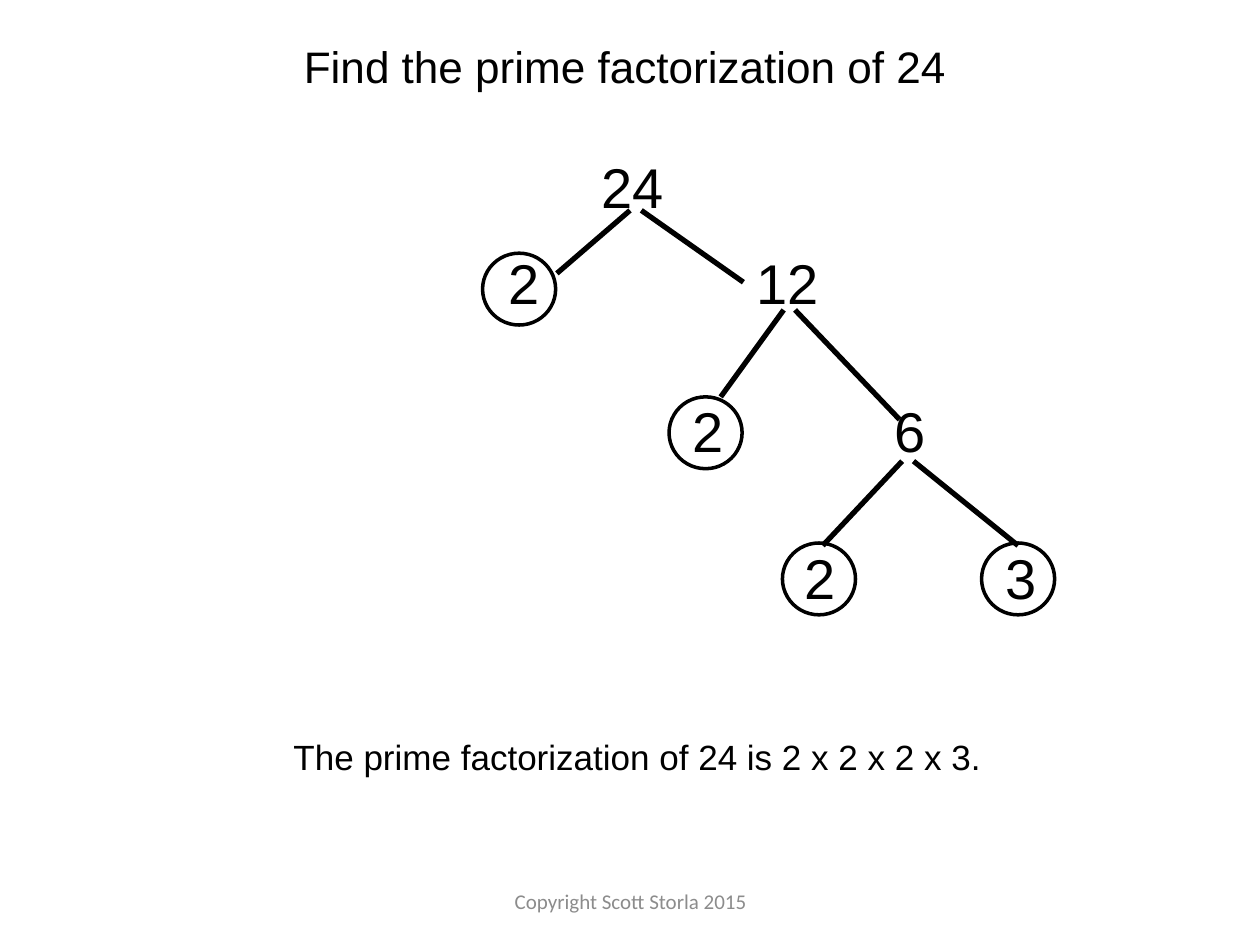
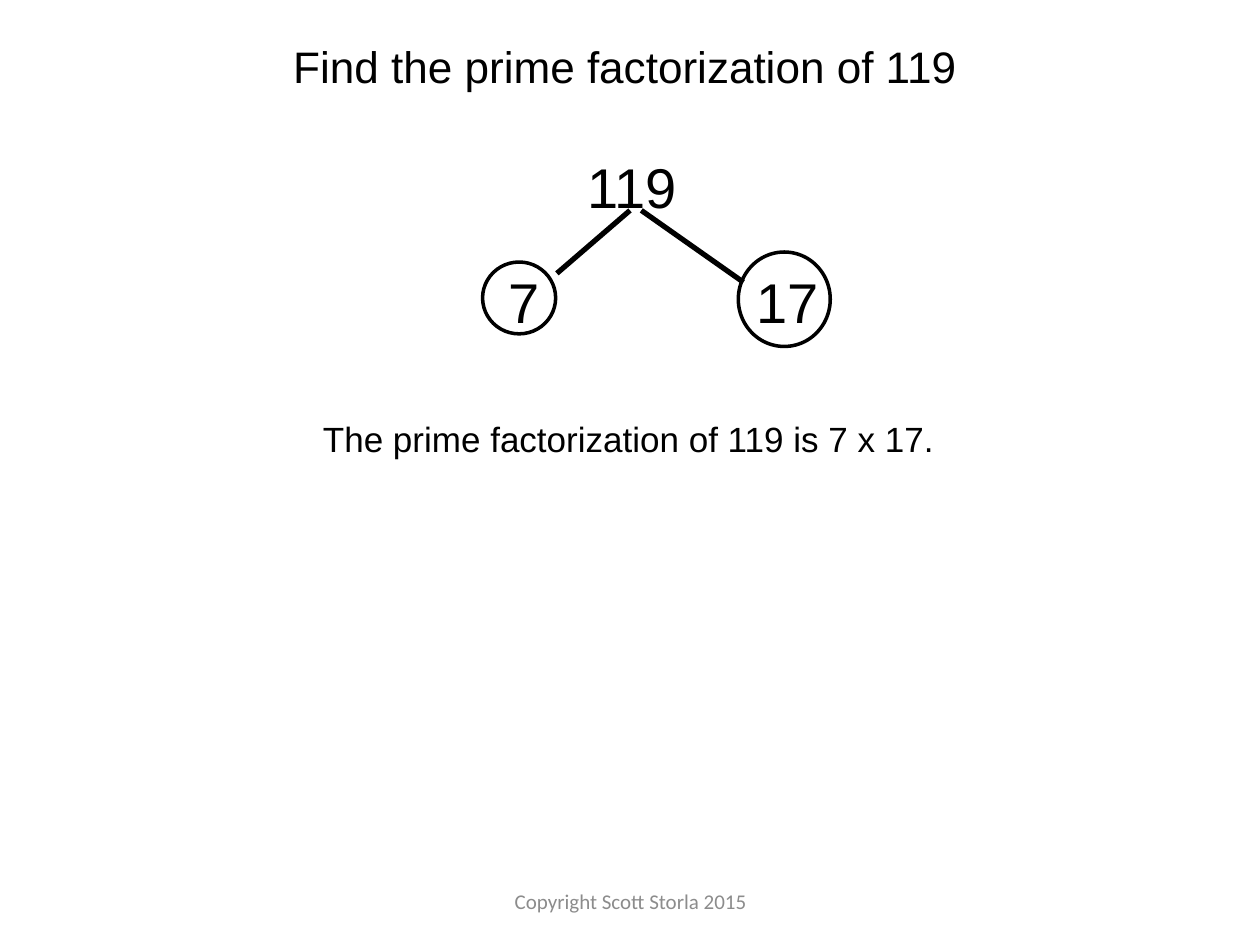
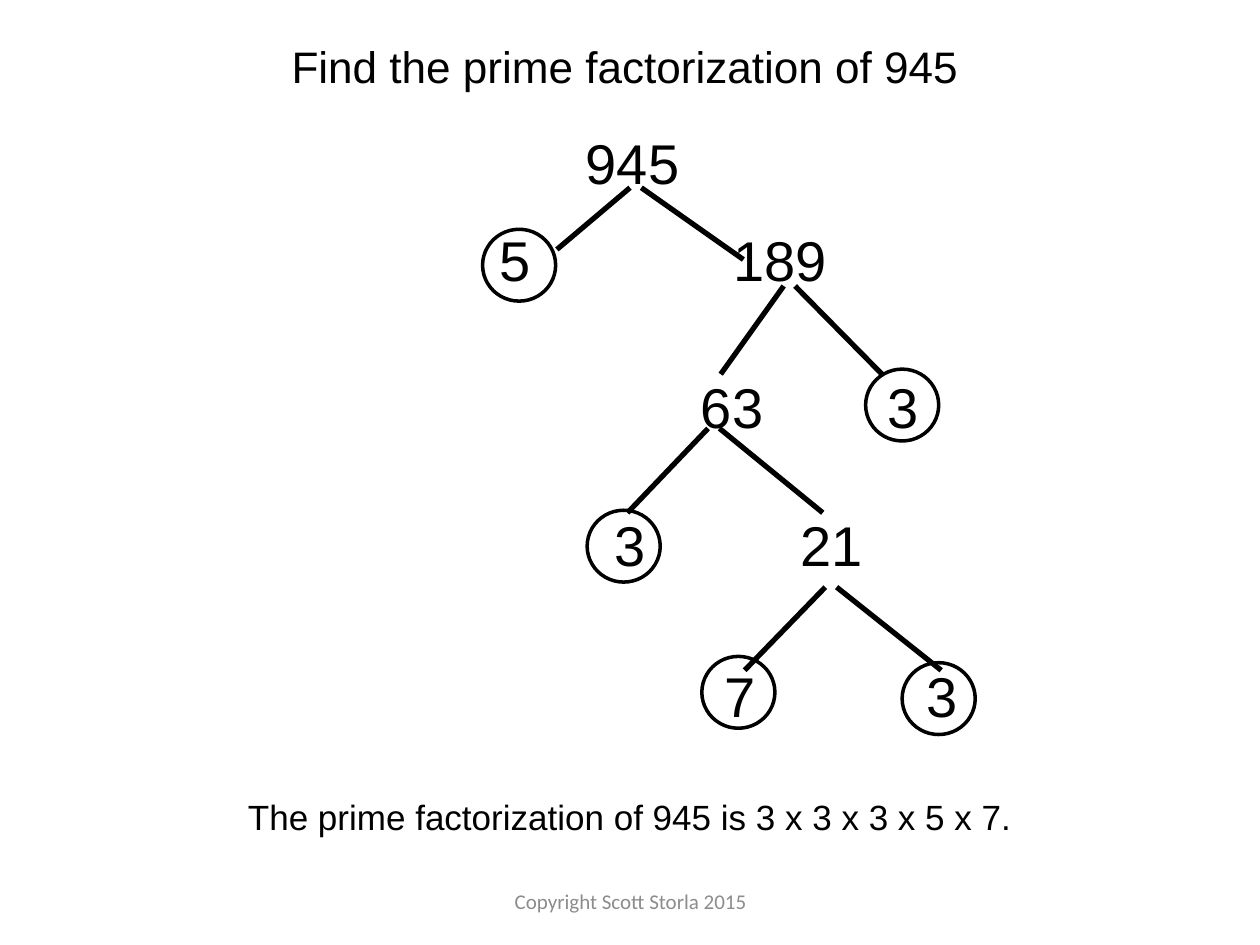
from pptx import Presentation
from pptx.dml.color import RGBColor
from pptx.enum.shapes import MSO_CONNECTOR as Connector, MSO_SHAPE as Preset
from pptx.enum.text import MSO_ANCHOR as Anchor, PP_ALIGN as Align
from pptx.util import Inches, Pt
from lxml import etree

BLACK = RGBColor(0x00, 0x00, 0x00)
GREY = RGBColor(0x8C, 0x8C, 0x8C)
WHITE = RGBColor(0xFF, 0xFF, 0xFF)
DRAWING = "http://schemas.openxmlformats.org/drawingml/2006/main"
FORK_GAP = 0.09
PRIME_SIZE = (0.58, 0.57)

TREES = [
    {
        "number": "24",
        "answer": "2 x 2 x 2 x 3.",
        "answer_at": (0.06, 5.69, 10, 0.62),
        "labels": [("24", 5.02, 1.48), ("2", 4.16, 2.24), ("12", 6.25, 2.24),
                   ("2", 5.62, 3.41), ("6", 7.22, 3.41),
                   ("2", 6.51, 4.58), ("3", 8.1, 4.58)],
        "primes": [(3.83, 2.01), (5.31, 3.15), (6.21, 4.31), (7.79, 4.31)],
        "forks": [((5, 1.67), (4.42, 2.17), (5.9, 2.24)),
                  ((6.22, 2.46), (5.72, 3.15), (7.14, 3.33)),
                  ((7.16, 3.66), (6.53, 4.33), (8.08, 4.33))],
    },
    {
        "number": "119",
        "answer": "7 x 17.",
        "answer_at": (0.06, 3.17, 9.86, 0.62),
        "labels": [("119", 5.02, 1.48), ("7", 4.16, 2.39), ("17", 6.25, 2.39)],
        "primes": [(3.83, 2.08), (5.86, 2, 0.73, 0.75)],
        "forks": [((5, 1.67), (4.42, 2.17), (5.9, 2.24))],
    },
    {
        "number": "945",
        "answer": "3 x 3 x 3 x 5 x 7.",
        "answer_at": (1, 6.17, 8, 0.62),
        "labels": [("945", 5.02, 1.29), ("5", 4.09, 2.06), ("189", 6.19, 2.06),
                   ("63", 5.81, 3.22), ("3", 7.17, 3.22),
                   ("3", 5, 4.32), ("21", 6.6, 4.32),
                   ("7", 5.87, 5.52), ("3", 7.48, 5.52)],
        "primes": [(3.83, 1.82), (6.87, 2.93), (4.66, 4.05), (5.57, 5.21), (7.16, 5.26)],
        "forks": [((5, 1.49), (4.42, 1.98), (5.9, 2.06)),
                  ((6.22, 2.27), (5.72, 2.97), (7, 2.97)),
                  ((5.62, 3.4), (4.98, 4.07), (6.53, 4.07)),
                  ((6.55, 4.66), (5.91, 5.32), (7.47, 5.32))],
    },
]


def write(box, text, size=20, font="Arial", color=BLACK):
    """Fill a box with one centred line of text."""
    frame = box.text_frame
    frame.word_wrap = True
    frame.vertical_anchor = Anchor.MIDDLE
    para = frame.paragraphs[0]
    para.alignment = Align.CENTER
    span = para.add_run()
    span.text = text
    span.font.size = Pt(size)
    span.font.name = font
    span.font.color.rgb = color


class FactorDeck:
    """Draw factor trees, one to a slide, in a common style."""

    def __init__(self):
        """Start an empty deck."""
        self.deck = Presentation()
        self.deck.slide_width = Inches(10)
        self.deck.slide_height = Inches(7.5)
        self.page = None

    def start(self, title):
        """Add a slide with its title and footer."""
        self.page = self.deck.slides.add_slide(self.deck.slide_layouts[6])
        fill = self.page.background.fill
        fill.solid()
        fill.fore_color.rgb = WHITE
        self.text(title, (0.96, 0.25, 8, 0.55), size=25.2)
        self.text("Copyright Scott Storla 2015", (3.42, 6.95, 3.17, 0.4),
                  size=12, font="Calibri", color=GREY)

    def text(self, text, place, **style):
        """Add a text box."""
        box = self.page.shapes.add_textbox(*map(Inches, place))
        write(box, text, **style)

    def label(self, number, center, middle):
        """Add a number centred on a point."""
        width, height = 1.39, 0.62
        place = (center - width / 2, middle - height / 2, width, height)
        self.text(number, place, size=32)

    def prime(self, left, top, width=PRIME_SIZE[0], height=PRIME_SIZE[1]):
        """Add the ring around a prime."""
        ring = self.page.shapes.add_shape(
            Preset.OVAL, *map(Inches, (left, top, width, height)))
        ring.shadow.inherit = False
        ring.fill.background()
        ring.line.color.rgb = BLACK
        ring.line.width = Pt(2)

    def branch(self, start, end):
        """Add one straight branch."""
        line = self.page.shapes.add_connector(
            Connector.STRAIGHT, *map(Inches, (*start, *end)))
        line.line.color.rgb = BLACK
        line.line.width = Pt(3)
        etree.SubElement(line._element.spPr, f"{{{DRAWING}}}effectLst")

    def fork(self, start, left_end, right_end):
        """Add the two branches below a number."""
        self.branch(start, left_end)
        self.branch((start[0] + FORK_GAP, start[1]), right_end)

    def tree(self, number, answer, answer_at, labels, primes, forks):
        """Add a slide with a whole factor tree."""
        self.start(f"Find the prime factorization of {number}")
        for prime in primes:
            self.prime(*prime)
        for fork in forks:
            self.fork(*fork)
        for label in labels:
            self.label(*label)
        self.text(f"The prime factorization of {number} is {answer}", answer_at)


def main():
    """Build and save the deck."""
    factors = FactorDeck()
    for tree in TREES:
        factors.tree(**tree)
    factors.deck.save("out.pptx")


if __name__ == "__main__":
    main()
